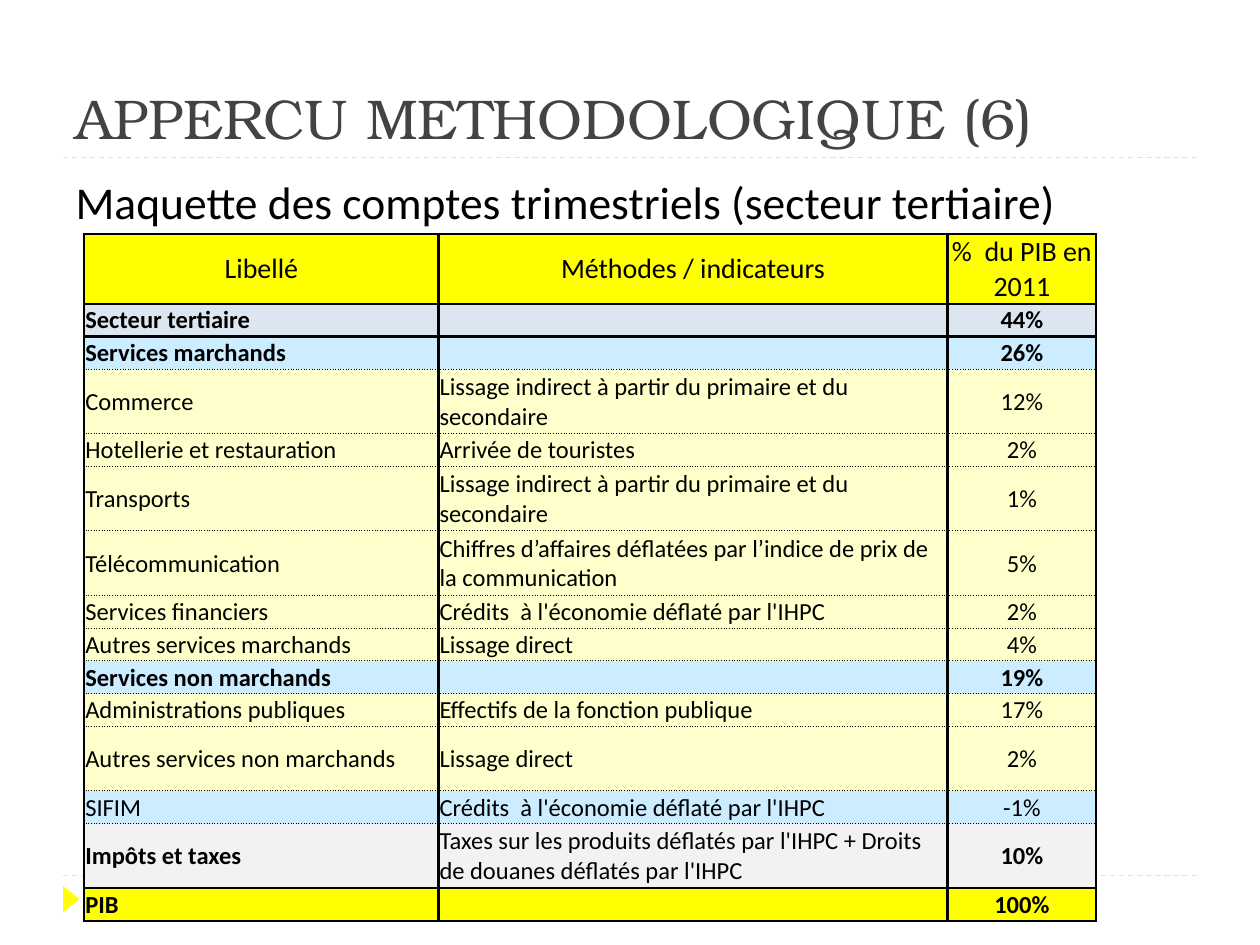
from lxml import etree
from pptx import Presentation
from pptx.dml.color import RGBColor
from pptx.enum.dml import MSO_LINE
from pptx.enum.shapes import MSO_CONNECTOR, MSO_SHAPE
from pptx.enum.text import MSO_ANCHOR, MSO_AUTO_SIZE, PP_ALIGN
from pptx.oxml.ns import qn
from pptx.util import Cm, Pt

STRAIGHT = MSO_CONNECTOR.STRAIGHT
TRIANGLE = MSO_SHAPE.ISOSCELES_TRIANGLE
DASH = MSO_LINE.DASH
LEFT, CENTER = PP_ALIGN.LEFT, PP_ALIGN.CENTER
TOP, MIDDLE, BOTTOM = MSO_ANCHOR.TOP, MSO_ANCHOR.MIDDLE, MSO_ANCHOR.BOTTOM
NO_FIT = MSO_AUTO_SIZE.NONE

COLORS = {
    "yellow": "FFFF00",
    "title": "434342",
    "black": "000000",
    "sector": "DCE6F1",
    "group": "CCECFF",
    "item": "FFFFCC",
    "tax": "F2F2F2",
}
TITLE_FONT, BODY_FONT = "TeX Gyre Bonum", "Calibri"

COL_WIDTHS = [7.14, 10.26, 3.0]
ONE_LINE, TWO_LINES = 0.66, 1.3
# label, method, share, fill, bold label and share, row height
ROWS = [
    ("Libellé", "Méthodes / indicateurs", "%  du PIB en 2011", "yellow", False, TWO_LINES),
    ("Secteur tertiaire", "", "44%", "sector", True, ONE_LINE),
    ("Services marchands", "", "26%", "group", True, ONE_LINE),
    ("Commerce", "Lissage indirect à partir du primaire et du secondaire", "12%",
     "item", False, TWO_LINES),
    ("Hotellerie et restauration", "Arrivée de touristes", "2%", "item", False, ONE_LINE),
    ("Transports", "Lissage indirect à partir du primaire et du secondaire", "1%",
     "item", False, TWO_LINES),
    ("Télécommunication",
     "Chiffres d’affaires déflatées par l’indice de prix de la communication", "5%",
     "item", False, TWO_LINES),
    ("Services financiers", "Crédits  à l'économie déflaté par l'IHPC", "2%",
     "item", False, ONE_LINE),
    ("Autres services marchands", "Lissage direct", "4%", "item", False, ONE_LINE),
    ("Services non marchands", "", "19%", "group", True, ONE_LINE),
    ("Administrations publiques", "Effectifs de la fonction publique", "17%",
     "item", False, ONE_LINE),
    ("Autres services non marchands", "Lissage direct", "2%", "item", False, TWO_LINES),
    ("SIFIM", "Crédits  à l'économie déflaté par l'IHPC", "-1%", "group", False, ONE_LINE),
    ("Impôts et taxes",
     "Taxes sur les produits déflatés par l'IHPC + Droits de douanes déflatés par l'IHPC",
     "10%", "tax", True, TWO_LINES),
    ("PIB", "", "100%", "yellow", True, ONE_LINE),
]
DOTTED_EDGES = range(3, 14)  # horizontal edges, counted from the table top


def rgb(name):
    return RGBColor.from_string(COLORS[name])


def format_runs(p, font, size, color, bold=False):
    for r in p.runs:
        r.font.name = font
        r.font.size = Pt(size)
        r.font.bold = bold
        r.font.color.rgb = rgb(color)


def fill_placeholder(sp, box, text, anchor, font, size, color):
    sp.left, sp.top, sp.width, sp.height = map(Cm, box)
    tf = sp.text_frame
    tf.text = text
    tf.word_wrap = True
    tf.auto_size = NO_FIT
    tf.vertical_anchor = anchor
    p = tf.paragraphs[0]
    p.alignment = LEFT
    p.space_before = Pt(0)
    format_runs(p, font, size, color)
    return p


def remove_bullet(p, hanging):
    pPr = p._p.get_or_add_pPr()
    pPr.set("marL", str(Cm(hanging)))
    pPr.set("indent", str(-Cm(hanging)))
    etree.SubElement(pPr, qn("a:buNone"))


def add_dashed_line(s, y):
    line = s.shapes.add_connector(STRAIGHT, Cm(1.27), Cm(y), Cm(24.13), Cm(y))
    line.line.color.rgb = rgb("yellow")
    line.line.width = Pt(0.75)
    line.line.dash_style = DASH
    etree.SubElement(line._element.spPr, qn("a:effectLst"))


def add_page_marker(s):
    sp = s.shapes.add_shape(TRIANGLE, Cm(1.17), Cm(17.96), Cm(0.53), Cm(0.33))
    sp.rotation = 90
    sp.shadow.inherit = False
    sp.fill.solid()
    sp.fill.fore_color.rgb = rgb("yellow")
    sp.line.fill.background()


def add_border(cell, side, dotted=False):
    ln = etree.SubElement(cell._tc.get_or_add_tcPr(), qn(f"a:ln{side}"),
                          w=str(Pt(0.5 if dotted else 1.5)))
    fill = etree.SubElement(ln, qn("a:solidFill"))
    etree.SubElement(fill, qn("a:srgbClr"), val=COLORS["black"])
    etree.SubElement(ln, qn("a:prstDash"), val="sysDot" if dotted else "solid")


def format_cell(cell, text, row, size, bold, align, fill):
    # Borders come before the fill in the cell properties
    add_border(cell, "L")
    add_border(cell, "R")
    add_border(cell, "T", row in DOTTED_EDGES)
    add_border(cell, "B", row + 1 in DOTTED_EDGES)
    cell.fill.solid()
    cell.fill.fore_color.rgb = rgb(fill)
    cell.margin_left = cell.margin_right = cell.margin_top = Cm(0.02)
    cell.margin_bottom = Cm(0)
    cell.vertical_anchor = MIDDLE
    p = cell.text_frame.paragraphs[0]
    p.alignment = align
    if text:
        p.text = text
        format_runs(p, BODY_FONT, size, "black", bold)
    else:
        # Keep empty cells from stretching their row
        etree.SubElement(p._p, qn("a:endParaRPr"), sz=str(size * 100))


def add_accounts_table(s):
    frame = s.shapes.add_table(len(ROWS), len(COL_WIDTHS), Cm(1.7), Cm(4.72),
                               Cm(sum(COL_WIDTHS)), Cm(sum(row[-1] for row in ROWS)))
    table = frame.table
    table.horz_banding = False
    for column, width in zip(table.columns, COL_WIDTHS):
        column.width = Cm(width)
    for i, (label, method, share, fill, bold, height) in enumerate(ROWS):
        table.rows[i].height = Cm(height)
        size = 16 if i == 0 else 14
        for j, text in enumerate((label, method, share)):
            align = CENTER if i == 0 or j == 2 else LEFT
            format_cell(table.cell(i, j), text, i, size, bold and j != 1, align, fill)


def main():
    prs = Presentation()
    prs.slide_width, prs.slide_height = Cm(25.4), Cm(19.05)
    s = prs.slides.add_slide(prs.slide_layouts[1])

    # Page decoration
    for y in (17.65, 3.18):
        add_dashed_line(s, y)
    add_page_marker(s)

    # Title and subtitle
    fill_placeholder(s.shapes.title, (1.27, 0.43, 22.86, 2.74),
                     "APPERCU METHODOLOGIQUE (6)", BOTTOM, TITLE_FONT, 32, "title")
    p = fill_placeholder(s.placeholders[1], (1.27, 3.38, 22.86, 1.73),
                         "Maquette des comptes trimestriels (secteur tertiaire)",
                         TOP, BODY_FONT, 26, "black")
    remove_bullet(p, 0.76)

    # Quarterly accounts
    add_accounts_table(s)

    prs.save("out.pptx")


if __name__ == "__main__":
    main()
